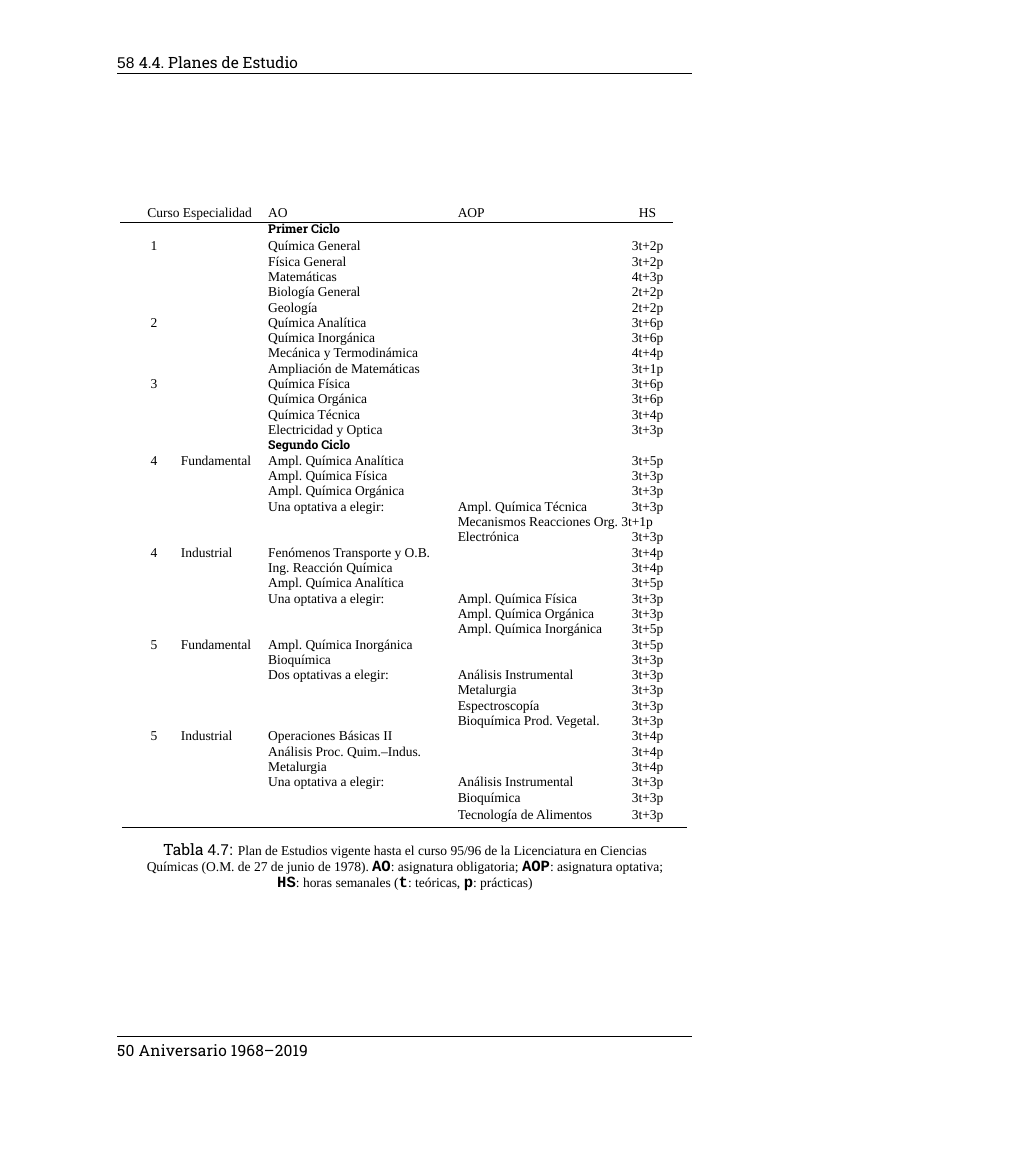
from typing import Any, NamedTuple

from lxml import etree
from pptx import Presentation, util as u
from pptx.dml import color as dml
from pptx.enum import shapes, text
from pptx.oxml import ns

COLORS = {"ink": "000000", "paper": "FFFFFF"}
SERIF, SLAB, SANS, MONO = "Times New Roman", "Roboto Slab", "Arial", "Courier New"
LEFT, RIGHT, CENTER = text.PP_ALIGN.LEFT, text.PP_ALIGN.RIGHT, text.PP_ALIGN.CENTER
NO_STYLE = "{2D5ABB26-0587-4C30-8999-92F81FD0307C}"
RULE_WIDTH = u.Pt(0.5)


class Piece(NamedTuple):
    wording: str
    font: str = SERIF
    size: float = 10
    bold: bool = False
    tracking: int = 0


class TextBlock(NamedTuple):
    top: float
    height: float
    inset: float
    spacing: float
    align: Any
    lines: list[list[Piece]]


class Rule(NamedTuple):
    left: float
    right: float
    y: float


class Column(NamedTuple):
    width: float
    align: Any
    margin_left: float
    margin_right: float


class Subject(NamedTuple):
    hours: str
    required: str = ""
    optional: str = ""
    course: str = ""
    specialty: str = ""


COLUMNS = [
    Column(1.27, RIGHT, 0, 0.3),
    Column(2.46, LEFT, 0.31, 0),
    Column(4.95, LEFT, 0.13, 0),
    Column(4.52, LEFT, 0.13, 0),
    Column(1.22, CENTER, 0, 0.09),
]
HEADER_HEIGHT, FIRST_HEIGHT, ROW_HEIGHT, LAST_HEIGHT = 0.46, 0.43, 0.4, 0.5
CYCLES = ("Primer Ciclo", "Segundo Ciclo")
SUBJECTS = [
    Subject("", CYCLES[0]),
    Subject("3t+2p", "Química General", course="1"),
    Subject("3t+2p", "Física General"),
    Subject("4t+3p", "Matemáticas"),
    Subject("2t+2p", "Biología General"),
    Subject("2t+2p", "Geología"),
    Subject("3t+6p", "Química Analítica", course="2"),
    Subject("3t+6p", "Química Inorgánica"),
    Subject("4t+4p", "Mecánica y Termodinámica"),
    Subject("3t+1p", "Ampliación de Matemáticas"),
    Subject("3t+6p", "Química Física", course="3"),
    Subject("3t+6p", "Química Orgánica"),
    Subject("3t+4p", "Química Técnica"),
    Subject("3t+3p", "Electricidad y Optica"),
    Subject("", CYCLES[1]),
    Subject("3t+5p", "Ampl. Química Analítica", "", "4", "Fundamental"),
    Subject("3t+3p", "Ampl. Química Física"),
    Subject("3t+3p", "Ampl. Química Orgánica"),
    Subject("3t+3p", "Una optativa a elegir:", "Ampl. Química Técnica"),
    Subject("", "", "Mecanismos Reacciones Org. 3t+1p"),
    Subject("3t+3p", "", "Electrónica"),
    Subject("3t+4p", "Fenómenos Transporte y O.B.", "", "4", "Industrial"),
    Subject("3t+4p", "Ing. Reacción Química"),
    Subject("3t+5p", "Ampl. Química Analítica"),
    Subject("3t+3p", "Una optativa a elegir:", "Ampl. Química Física"),
    Subject("3t+3p", "", "Ampl. Química Orgánica"),
    Subject("3t+5p", "", "Ampl. Química Inorgánica"),
    Subject("3t+5p", "Ampl. Química Inorgánica", "", "5", "Fundamental"),
    Subject("3t+3p", "Bioquímica"),
    Subject("3t+3p", "Dos optativas a elegir:", "Análisis Instrumental"),
    Subject("3t+3p", "", "Metalurgia"),
    Subject("3t+3p", "", "Espectroscopía"),
    Subject("3t+3p", "", "Bioquímica Prod. Vegetal."),
    Subject("3t+4p", "Operaciones Básicas II", "", "5", "Industrial"),
    Subject("3t+4p", "Análisis Proc. Quim.–Indus."),
    Subject("3t+4p", "Metalurgia"),
    Subject("3t+3p", "Una optativa a elegir:", "Análisis Instrumental"),
    Subject("3t+3p", "", "Bioquímica"),
    Subject("3t+3p", "", "Tecnología de Alimentos"),
]


def term(wording: str) -> Piece:
    return Piece(wording, MONO, 11.5, True)


BLOCKS = [
    TextBlock(1.35, 0.56, 0.03, 14, LEFT,
              [[Piece("58 ", SANS, 11.5), Piece("4.4. Planes de Estudio", SLAB, 11.5)]]),
    TextBlock(21.59, 5.46, 0.41, 12, CENTER, [
        [Piece("Tabla ", SLAB, 11.5), Piece("4.7: ", SANS, 11.5),
         Piece("Plan de Estudios vigente hasta el curso 95/96 de la Licenciatura en Ciencias")],
        [Piece("Químicas (O.M. de 27 de junio de 1978). "), term("AO"),
         Piece(": asignatura obligatoria; "), term("AOP"), Piece(": asignatura optativa;")],
        [term("HS"), Piece(": horas semanales ("), term("t"), Piece(": teóricas, "),
         term("p"), Piece(": prácticas)")],
    ]),
    TextBlock(27.04, 0.66, 0.15, 14, LEFT,
              [[Piece("50 Aniversario 1968–2019", SLAB, 11.5, tracking=10)]]),
]
RULES = [Rule(3.06, 18.07, 1.91), Rule(3.18, 17.94, 21.6), Rule(3.06, 18.07, 27.05)]


def set_attributes(target: Any, values: dict[str, Any]) -> None:
    for name, value in values.items():
        setattr(target, name, value)


def write(paragraph: Any, lines: list[list[Piece]], spacing: float, align: Any) -> None:
    set_attributes(paragraph, {"alignment": align, "line_spacing": u.Pt(spacing)})
    for number, line in enumerate(lines):
        if number:
            paragraph.add_line_break()
        for piece in line:
            run = paragraph.add_run()
            run.text = piece.wording
            set_attributes(run.font, {"name": piece.font, "size": u.Pt(piece.size), "bold": piece.bold})
            run.font.color.rgb = dml.RGBColor.from_string(COLORS["ink"])
            if piece.tracking:
                run._r.get_or_add_rPr().set("spc", str(piece.tracking))


def add_block(slide: Any, block: TextBlock) -> None:
    shape = slide.shapes.add_textbox(u.Cm(2.93), u.Cm(block.top), u.Cm(15.24), u.Cm(block.height))
    set_attributes(shape.text_frame, {
        "word_wrap": True, "margin_left": u.Cm(0.13), "margin_right": u.Cm(0.09 if block.align == CENTER else 0),
        "margin_top": u.Cm(block.inset), "margin_bottom": 0})
    write(shape.text_frame.paragraphs[0], block.lines, block.spacing, block.align)


def add_rule(slide: Any, rule: Rule) -> None:
    line = slide.shapes.add_connector(shapes.MSO_CONNECTOR.STRAIGHT, u.Cm(rule.left), u.Cm(rule.y),
                                      u.Cm(rule.right), u.Cm(rule.y))
    line.line.width = RULE_WIDTH
    line.line.color.rgb = dml.RGBColor.from_string(COLORS["ink"])
    etree.SubElement(line._element.spPr, ns.qn("a:effectLst"))


def add_border(cell: Any, side: str, width: int = RULE_WIDTH) -> None:
    border = etree.Element(ns.qn(f"a:{side}"), w=str(width))
    fill = etree.SubElement(border, ns.qn("a:solidFill" if width else "a:noFill"))
    if width:
        etree.SubElement(fill, ns.qn("a:srgbClr"), val=COLORS["ink"])
    cell._tc.get_or_add_tcPr().insert(0, border)


def fill_cell(cell: Any, column: Column, wording: str, spacing: float) -> None:
    set_attributes(cell, {
        "margin_left": u.Cm(column.margin_left), "margin_right": u.Cm(column.margin_right),
        "margin_top": 0, "margin_bottom": 0, "vertical_anchor": text.MSO_ANCHOR.MIDDLE})
    cell.fill.background()
    paragraph = cell.text_frame.paragraphs[0]
    piece = Piece(wording, SLAB, 9, True) if wording in CYCLES else Piece(wording)
    write(paragraph, [[piece] if wording else []], spacing, column.align)
    if not wording:
        etree.SubElement(paragraph._p, ns.qn("a:endParaRPr"), sz="900")


def add_plan(slide: Any) -> None:
    rows = [("Curso Especialidad", "", "AO", "AOP", "HS")]
    rows += [(s.course, s.specialty, s.required, s.optional, s.hours) for s in SUBJECTS]
    heights = [HEADER_HEIGHT, FIRST_HEIGHT, *[ROW_HEIGHT] * (len(rows) - 3), LAST_HEIGHT]
    frame = slide.shapes.add_table(len(rows), len(COLUMNS), u.Cm(3.14), u.Cm(5.34),
                                   u.Cm(sum(c.width for c in COLUMNS)), u.Cm(sum(heights)))
    table = frame.table
    set_attributes(table, {"first_row": False, "horz_banding": False})
    table._tbl.tblPr.find(ns.qn("a:tableStyleId")).text = NO_STYLE
    for column, entry in zip(table.columns, COLUMNS):
        column.width = u.Cm(entry.width)
    for r, (row, height) in enumerate(zip(rows, heights)):
        table.rows[r].height = u.Cm(height)
        for c, (column, wording) in enumerate(zip(COLUMNS, row)):
            cell = table.cell(r, c)
            fill_cell(cell, column, wording, 10 if r < 2 else 11)
            if r < 2:
                add_border(cell, "lnB", 0 if r else RULE_WIDTH)
            if r == 1:
                add_border(cell, "lnT")
        if row[3].startswith("Mecanismos"):
            table.cell(r, 3).merge(table.cell(r, 4))
    table.cell(0, 0).merge(table.cell(0, 1))


def main() -> None:
    presentation = Presentation()
    set_attributes(presentation, {"slide_width": u.Cm(26.6), "slide_height": u.Cm(30.71)})
    slide = presentation.slides.add_slide(presentation.slide_layouts[6])
    slide.background.fill.solid()
    slide.background.fill.fore_color.rgb = dml.RGBColor.from_string(COLORS["paper"])
    add_plan(slide)
    for block in BLOCKS:
        add_block(slide, block)
    for rule in RULES:
        add_rule(slide, rule)
    presentation.save("out.pptx")


if __name__ == "__main__":
    main()
